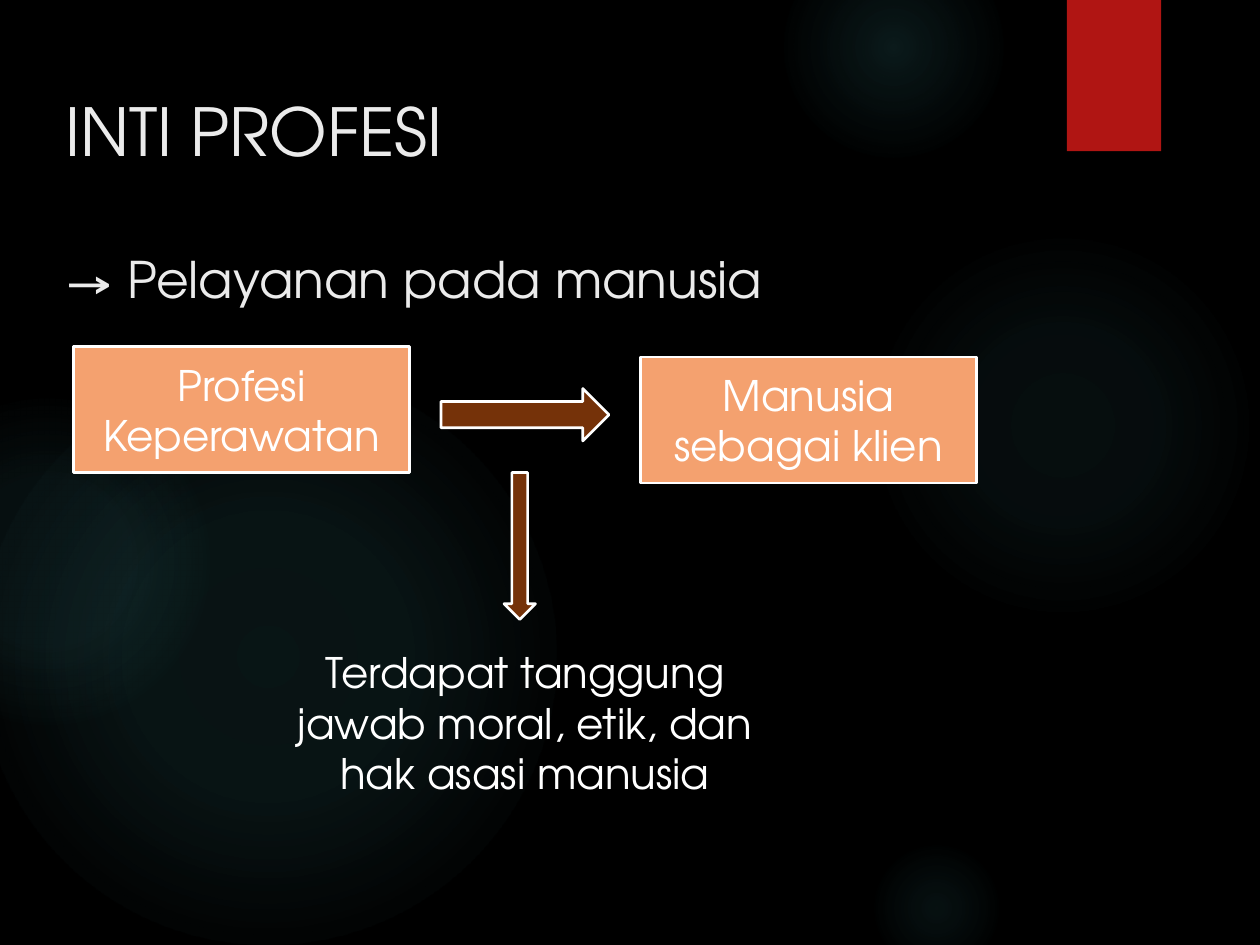
from lxml.etree import SubElement
from pptx import Presentation
from pptx.dml.color import RGBColor
from pptx.enum.shapes import MSO_SHAPE as SHAPE
from pptx.enum.text import MSO_ANCHOR as ANCHOR, PP_ALIGN as ALIGN
from pptx.oxml.ns import qn
from pptx.util import Inches, Pt

FONT = "TeX Gyre Adventor"
BLACK = RGBColor(0x00, 0x00, 0x00)
WHITE = RGBColor(0xFF, 0xFF, 0xFF)
OFF_WHITE = RGBColor(0xEB, 0xEB, 0xEB)
TEAL = RGBColor(0x50, 0xB9, 0xC1)
RED = RGBColor(0xB0, 0x15, 0x13)
ORANGE = RGBColor(0xF4, 0xA1, 0x6F)
BROWN = RGBColor(0x75, 0x32, 0x09)

CELLS_PER_INCH = 12  # the slide is a grid of 120 columns by 90 rows

# column, row, diameter, then (position %, opacity %) of the gradient stops
GLOWS = [
    (82.7, 22, 37, [(0, 7), (36, 6), (69, 0)]),
    (74.6, -6, 21, [(0, 14), (36, 7), (73, 0)]),
    (82.7, 80, 13, [(0, 9), (36, 5), (66, 0)]),
    (-2, 35, 55, [(0, 11), (36, 10), (75, 0)]),
    (-11, 38, 31, [(0, 8), (36, 8), (72, 0)]),
]


def grid(*cells):
    return [Inches(c / CELLS_PER_INCH) for c in cells]


def add_block(slide, kind, box, color=None, outlined=True):
    """Add a flat preset shape; box is column, row, columns wide, rows high."""
    sp = slide.shapes.add_shape(kind, *grid(*box))
    sp.shadow.inherit = False
    if color is not None:
        sp.fill.solid()
        sp.fill.fore_color.rgb = color
    if outlined:
        sp.line.color.rgb = WHITE
        sp.line.width = Pt(1.5)
    else:
        sp.line.fill.background()
    return sp


def add_glow(slide, column, row, size, stops):
    """Add a circle whose teal fades out from its centre."""
    sp = add_block(slide, SHAPE.OVAL, (column, row, size, size), outlined=False)
    sp.fill.gradient()
    grad = sp._element.spPr.find(qn("a:gradFill"))
    for child in list(grad):
        grad.remove(child)
    stop_list = SubElement(grad, qn("a:gsLst"))
    for position, opacity in stops:
        stop = SubElement(stop_list, qn("a:gs"), pos=str(position * 1000))
        color = SubElement(stop, qn("a:srgbClr"), val=str(TEAL))
        SubElement(color, qn("a:alpha"), val=str(opacity * 1000))
    shade = SubElement(grad, qn("a:path"), path="circle")
    SubElement(shade, qn("a:fillToRect"), l="50000", t="50000", r="50000", b="50000")


def format_paragraph(p, size, color, align):
    p.alignment = align
    for r in p.runs:
        r.font.name = FONT
        r.font.size = Pt(size)
        r.font.color.rgb = color


def set_label(sp, text, anchor):
    tf = sp.text_frame
    tf.word_wrap = True
    tf.vertical_anchor = anchor
    tf.text = text
    format_paragraph(tf.paragraphs[0], 24, WHITE, ALIGN.CENTER)


def set_title(slide, heading, subheading):
    title = slide.shapes.title
    title.left, title.top, title.width, title.height = grid(5, 8, 99, 17)
    tf = title.text_frame
    tf.vertical_anchor = ANCHOR.TOP
    tf.text = f"{heading}\n{subheading}"
    for p, size in zip(tf.paragraphs, (37.8, 28.8)):
        format_paragraph(p, size, OFF_WHITE, ALIGN.LEFT)
        p.space_before = Pt(0)
    tf.paragraphs[1].space_before = Pt(45)
    # bring the title in front of the decoration
    slide.shapes._spTree.append(title._element)


def main():
    prs = Presentation()
    prs.slide_width, prs.slide_height = grid(120, 90)
    slide = prs.slides.add_slide(prs.slide_layouts[5])
    slide.background.fill.solid()
    slide.background.fill.fore_color.rgb = BLACK

    for glow in GLOWS:
        add_glow(slide, *glow)
    add_block(slide, SHAPE.RECTANGLE, (101.6, 0, 9, 14.4), RED, outlined=False)
    set_title(slide, "INTI PROFESI", "→ Pelayanan pada manusia")

    for column, row, text in [(7, 33, "Profesi Keperawatan"),
                              (61, 34, "Manusia sebagai klien")]:
        sp = add_block(slide, SHAPE.RECTANGLE, (column, row, 32, 12), ORANGE)
        set_label(sp, text, ANCHOR.MIDDLE)

    duty = slide.shapes.add_textbox(*grid(26, 61, 48, 15.7))
    set_label(duty, "Terdapat tanggung jawab moral, etik, dan hak asasi manusia",
              ANCHOR.TOP)

    add_block(slide, SHAPE.RIGHT_ARROW, (42, 37, 16, 5), BROWN)
    add_block(slide, SHAPE.DOWN_ARROW, (48, 45, 3, 14), BROWN)
    prs.save("out.pptx")


if __name__ == "__main__":
    main()
